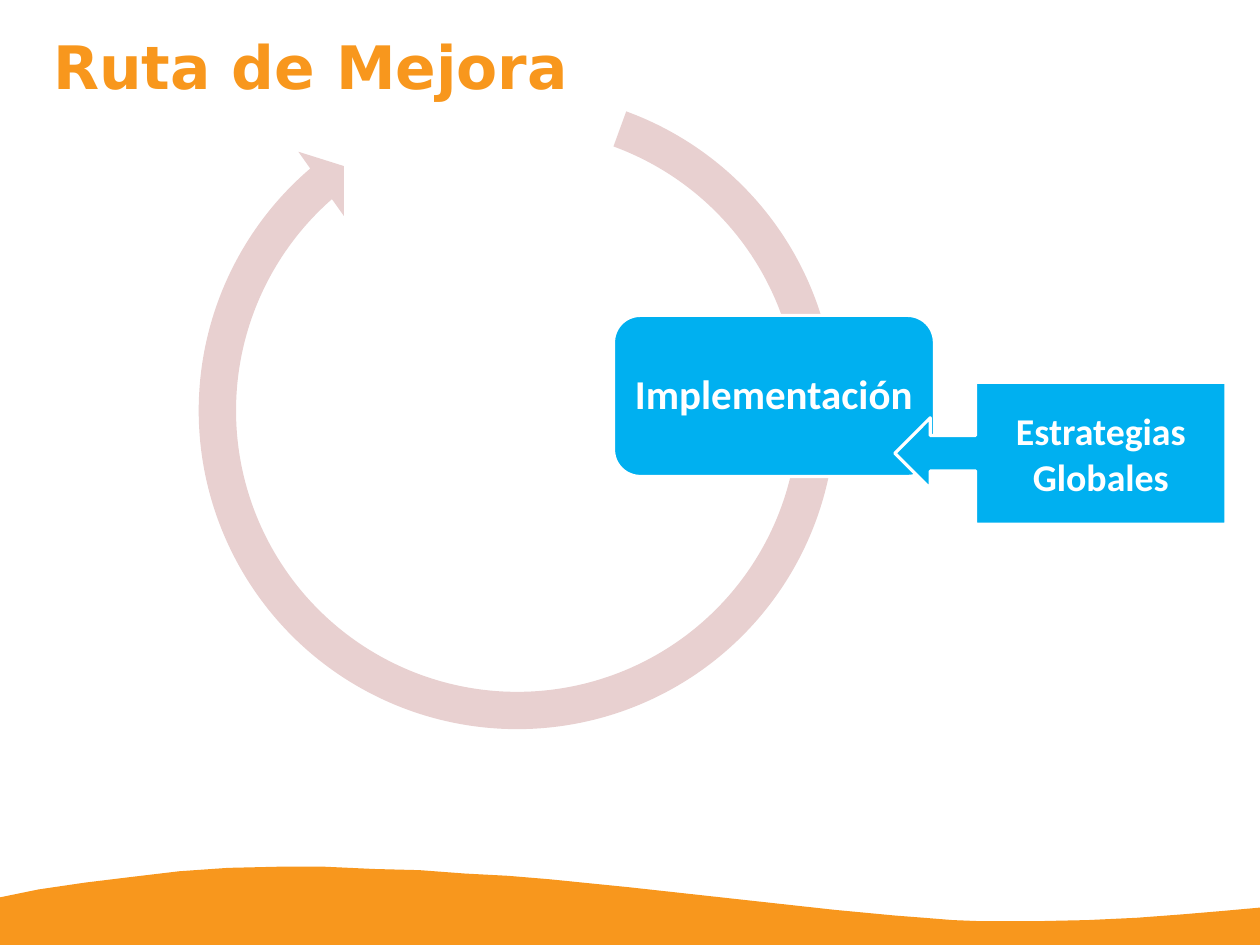
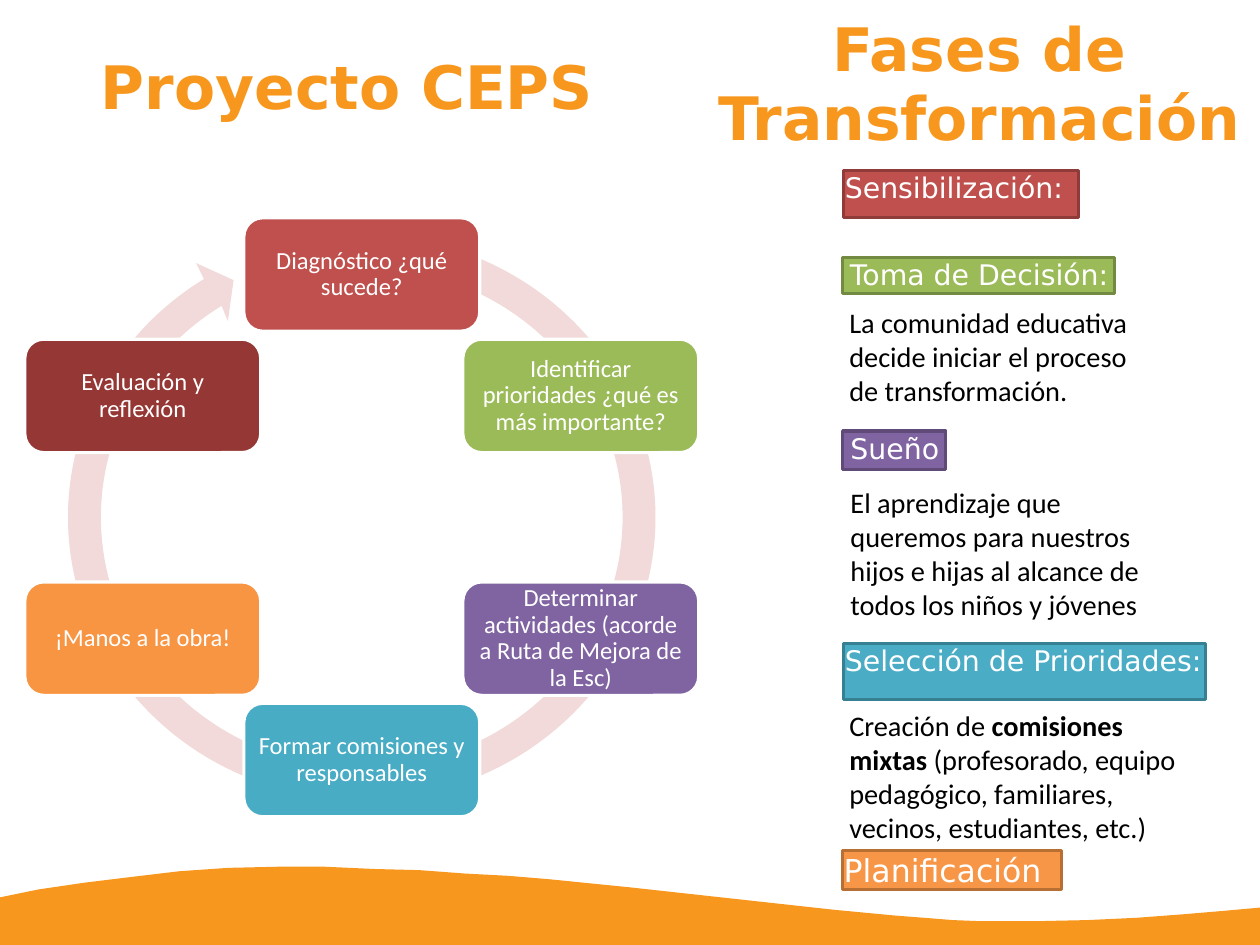
from math import cos, radians, sin, tan
from typing import NamedTuple

from lxml import etree
from pptx import Presentation
from pptx.dml.color import RGBColor
from pptx.enum import shapes as es, text as et
from pptx.oxml.ns import qn
from pptx.util import Inches, Pt

ORANGE = RGBColor(0xF8, 0x97, 0x1D)
SKY = RGBColor(0x00, 0xB0, 0xF0)
ROSE = RGBColor(0xE8, 0xD0, 0xD0)
BLUSH = RGBColor(0xF1, 0xDA, 0xD9)
WHITE = RGBColor(0xFF, 0xFF, 0xFF)
BLACK = RGBColor(0x00, 0x00, 0x00)
GREEN = RGBColor(0x9B, 0xBB, 0x59)
VIOLET = RGBColor(0x80, 0x64, 0xA2)

SANS, HEAD = "Calibri", "DejaVu Sans"
LEFT, MID = et.PP_ALIGN.LEFT, et.PP_ALIGN.CENTER
KIND = es.MSO_SHAPE
HUB = (3.19, 4.56)

WAVE = [(0, 7.91), (0.34, 7.84), (0.75, 7.78), (1.16, 7.73), (1.58, 7.68),
        (2.01, 7.65), (2.44, 7.64), (2.87, 7.64), (3.3, 7.66), (3.7, 7.67),
        (4.1, 7.7), (4.48, 7.72), (4.84, 7.75), (5.54, 7.82), (7.36, 8.02),
        (7.89, 8.07), (8.15, 8.09), (8.4, 8.11), (8.65, 8.12), (8.89, 8.12),
        (9.13, 8.12), (9.59, 8.11), (10.02, 8.09), (10.42, 8.06),
        (10.78, 8.03), (11.11, 8), (11.11, 8.33), (0, 8.33)]


class Box(NamedTuple):
    x: float
    y: float
    w: float
    h: float


class Step(NamedTuple):
    text: str
    fill: RGBColor


class Tag(NamedTuple):
    text: str
    box: Box
    fill: RGBColor
    edge: RGBColor
    align: et.PP_ALIGN = LEFT
    size: float = 18


class Note(NamedTuple):
    runs: list[tuple[str, bool]]
    box: Box


STEPS = [
    Step("Diagnóstico ¿qué sucede?", RGBColor(0xBF, 0x50, 0x4D)),
    Step("Identificar prioridades ¿qué es más importante?", GREEN),
    Step("Determinar actividades (acorde a Ruta de Mejora de la Esc)", VIOLET),
    Step("Formar comisiones y responsables", RGBColor(0x49, 0xAC, 0xC5)),
    Step("¡Manos a la obra!", RGBColor(0xF7, 0x95, 0x43)),
    Step("Evaluación y reflexión", RGBColor(0x95, 0x37, 0x34)),
]

TAGS = [
    Tag("Sensibilización:", Box(7.44, 1.5, 2.07, 0.42),
        RGBColor(0xC0, 0x50, 0x4D), RGBColor(0x8E, 0x3B, 0x39)),
    Tag("Toma de Decisión:", Box(7.43, 2.27, 2.4, 0.32),
        GREEN, RGBColor(0x73, 0x8A, 0x42), MID),
    Tag("Sueño", Box(7.43, 3.8, 0.91, 0.34),
        VIOLET, RGBColor(0x5F, 0x4A, 0x78), MID),
    Tag("Selección de Prioridades:", Box(7.44, 5.67, 3.19, 0.5),
        RGBColor(0x4B, 0xAC, 0xC6), RGBColor(0x37, 0x7F, 0x92)),
    Tag("Planificación", Box(7.43, 7.5, 1.93, 0.34),
        RGBColor(0xF7, 0x96, 0x46), RGBColor(0xB7, 0x6F, 0x34), size=20),
]

NOTES = [
    Note([("La comunidad educativa decide iniciar el proceso de "
           "transformación.", False)], Box(7.39, 2.64, 2.91, 1.31)),
    Note([("El aprendizaje que queremos para nuestros hijos e hijas al "
           "alcance de todos los niños y jóvenes", False)],
         Box(7.4, 4.23, 3.01, 1.31)),
    Note([("Creación de ", False), ("comisiones mixtas ", True),
          ("(profesorado, equipo pedagógico, familiares, vecinos, "
           "estudiantes, etc.)", False)], Box(7.39, 6.19, 3.24, 1.31)),
]


def place(box: Box) -> list[int]:
    return [Inches(v) for v in box]


def style(run, size: float, color: RGBColor, face=SANS, bold=False) -> None:
    font = run.font
    font.name, font.size, font.bold = face, Pt(size), bold
    font.color.rgb = color


def frame(shape, pad: float, anchor=et.MSO_ANCHOR.TOP):
    """Set wrapping, anchor and equal insets, and return the text frame."""
    tf = shape.text_frame
    tf.word_wrap, tf.auto_size = True, et.MSO_AUTO_SIZE.NONE
    tf.vertical_anchor = anchor
    tf.margin_left = tf.margin_right = Inches(pad)
    tf.margin_top = tf.margin_bottom = Inches(pad)
    return tf


def paint(shape, fill: RGBColor, edge=None):
    shape.shadow.inherit = False
    shape.fill.solid()
    shape.fill.fore_color.rgb = fill
    if edge is None:
        shape.line.fill.background()
    else:
        shape.line.color.rgb = edge
        shape.line.width = Pt(2)
    return shape


def block(slide, kind, box: Box, fill: RGBColor, edge=None):
    return paint(slide.shapes.add_shape(kind, *place(box)), fill, edge)


def label(shape, words: str, size: float, pad: float, bold=False,
          space=1.0) -> None:
    """Write white text in the middle of a shape."""
    par = frame(shape, pad, et.MSO_ANCHOR.MIDDLE).paragraphs[0]
    par.text = words
    par.alignment, par.line_spacing = MID, space
    style(par.runs[0], size, WHITE, bold=bold)


def outline(slide, points: list[tuple[float, float]], fill: RGBColor):
    dots = [(Inches(x), Inches(y)) for x, y in points]
    pen = slide.shapes.build_freeform(*dots[0], scale=1.0)
    pen.add_line_segments(dots[1:], close=True)
    return paint(pen.convert_to_shape(), fill)


def head(shape, words: str, box: Box, align=LEFT) -> None:
    """Place a heading and give it the shared title look."""
    shape.left, shape.top, shape.width, shape.height = place(box)
    par = frame(shape, 0).paragraphs[0]
    par.text = words
    par.alignment, par.line_spacing = align, Pt(44.1)
    style(par.runs[0], 38, ORANGE, HEAD, True)


def start(deck, title: str, box: Box):
    """Add a slide with its title and the wave at its foot."""
    slide = deck.slides.add_slide(deck.slide_layouts[5])
    head(slide.shapes.title, title, box)
    outline(slide, WAVE, ORANGE)
    return slide


def arc(rx: float, ry: float, first: float, last: float,
        count: int = 5) -> list[tuple[float, float]]:
    """Start point, then three Bézier points for each part of the arc."""
    step = radians(last - first) / count
    pull = 4 / 3 * tan(step / 4)

    def spot(turn: float, lead: float) -> tuple[float, float]:
        return (HUB[0] + rx * (cos(turn) - lead * sin(turn)),
                HUB[1] + ry * (sin(turn) + lead * cos(turn)))

    turns = [radians(first) + step * i for i in range(count + 1)]
    points = [spot(turns[0], 0)]
    for a, b in zip(turns, turns[1:]):
        points += [spot(a, pull), spot(b, -pull), spot(b, 0)]
    return points


def bend(lines: list) -> None:
    """Turn each three line segments into one Bézier curve."""
    for a, b, c in zip(lines[::3], lines[1::3], lines[2::3]):
        curve = etree.Element(qn("a:cubicBezTo"))
        a.addprevious(curve)
        for line in (a, b, c):
            curve.append(line[0])
            line.getparent().remove(line)


def cycle(slide) -> None:
    tip = [(1.73, 2.32), (2.06, 2.47), (2.01, 2.83)]
    outer = arc(2.59, 2.49, -74.5, 237.5)
    inner = arc(2.3, 2.21, 237.5, -74.5)
    ring = outline(slide, outer + tip + inner, BLUSH)
    lines = list(ring.element.iter(qn("a:lnTo")))
    bend(lines[:len(outer) - 1])
    bend(lines[len(outer) + len(tip):][:len(inner) - 1])

    wide, high = 2.08, 1
    for i, step in enumerate(STEPS):
        turn = radians(60 * i - 90)
        x, y = HUB[0] + 2.23 * cos(turn), HUB[1] + 2.14 * sin(turn)
        box = Box(x - wide / 2, y - high / 2, wide, high)
        node = block(slide, KIND.ROUNDED_RECTANGLE, box, step.fill, WHITE)
        label(node, step.text, 15.6, 0.07, space=0.9)


def mark(slide, tag: Tag) -> None:
    shape = block(slide, KIND.RECTANGLE, tag.box, tag.fill, tag.edge)
    tf = frame(shape, 0)
    tf.margin_left = Inches(0.01)
    par = tf.paragraphs[0]
    par.text, par.alignment = tag.text, tag.align
    style(par.runs[0], tag.size, WHITE, HEAD)


def write(slide, note: Note) -> None:
    tf = frame(slide.shapes.add_textbox(*place(note.box)), 0.1)
    tf.margin_top = tf.margin_bottom = Inches(0.05)
    for words, bold in note.runs:
        run = tf.paragraphs[0].add_run()
        run.text = words
        style(run, 18, BLACK, bold=bold)


def route(deck) -> None:
    slide = start(deck, "Ruta de Mejora", Box(0.47, 0.28, 9.2, 0.88))
    ring = block(slide, KIND.CIRCULAR_ARROW, Box(1.57, 0.63, 5.98, 5.98), ROSE)
    for i, value in enumerate((0.055, 3.307, 137.492, 174.022, 0.058)):
        ring.adjustments[i] = value
    stage = block(slide, KIND.ROUNDED_RECTANGLE, Box(5.41, 2.78, 2.83, 1.42),
                  SKY, WHITE)
    label(stage, "Implementación", 26, 0.1, True, 0.9)
    call = block(slide, KIND.LEFT_ARROW_CALLOUT, Box(7.89, 3.37, 2.92, 1.25),
                 SKY, WHITE)
    call.adjustments[3] = 0.756
    label(call, "Estrategias Globales", 24, 0.1, True)


def phases(deck) -> None:
    slide = start(deck, "Proyecto CEPS", Box(0.89, 0.46, 5.6, 1.1))
    cycle(slide)
    for tag in TAGS:
        mark(slide, tag)
    for note in NOTES:
        write(slide, note)
    box = Box(6.26, 0.12, 4.75, 1.1)
    head(slide.shapes.add_textbox(*place(box)), "Fases de Transformación",
         box, MID)


def main() -> None:
    deck = Presentation()
    deck.slide_width, deck.slide_height = Inches(11.11), Inches(8.33)
    route(deck)
    phases(deck)
    deck.save("out.pptx")


if __name__ == "__main__":
    main()
